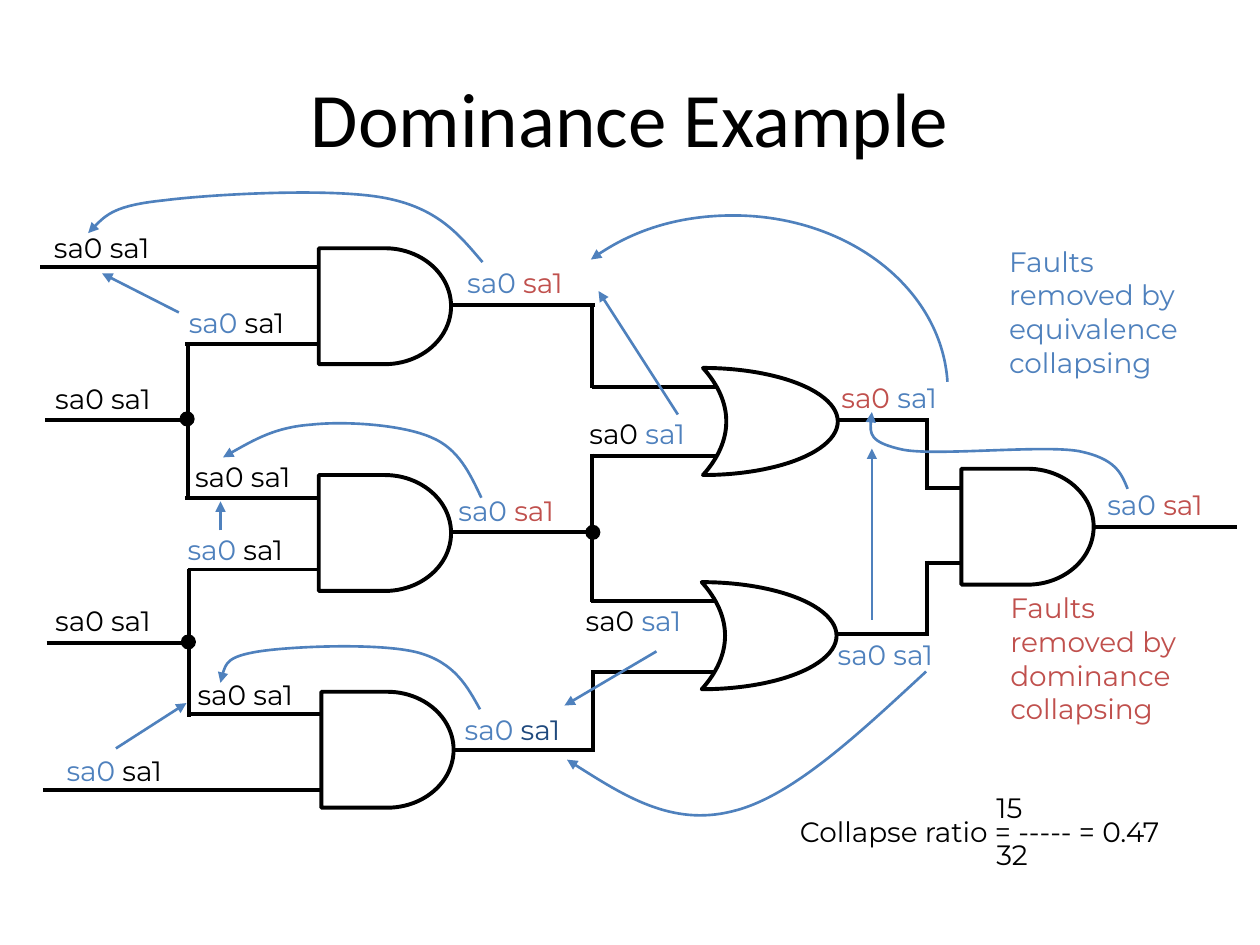
from collections import namedtuple

import lxml.etree
import pptx
import pptx.dml.color
import pptx.enum.shapes
import pptx.enum.text
import pptx.oxml.ns
import pptx.util

BLACK = pptx.dml.color.RGBColor(0x00, 0x00, 0x00)
BLUE = pptx.dml.color.RGBColor(0x4F, 0x81, 0xBD)
RED = pptx.dml.color.RGBColor(0xC0, 0x50, 0x4D)
NAVY = pptx.dml.color.RGBColor(0x1F, 0x49, 0x7D)

SHAPES = pptx.enum.shapes.MSO_SHAPE
ANCHOR = pptx.enum.text.MSO_ANCHOR
ALIGN = pptx.enum.text.PP_ALIGN
GRID_CM = 2.54
Box = namedtuple("Box", "left top width height")

AND_GATES = [(2.53, 1.97), (2.53, 3.77), (2.55, 5.49), (7.63, 3.72)]
OR_GATES = [(5.58, 2.92), (5.57, 4.62)]
JUNCTIONS = [(1.43, 3.27), (1.44, 5.04), (4.65, 4.17)]
HORIZONTAL_WIRES = [
    (2.12, 0.32, 2.53), (2.73, 1.47, 2.54), (3.33, 0.36, 1.49),
    (3.95, 1.47, 2.54), (4.52, 1.49, 2.54), (5.1, 0.37, 1.51),
    (5.67, 1.49, 2.55), (6.27, 0.34, 2.56),
    (2.42, 3.58, 4.72), (4.22, 3.57, 4.7), (5.95, 3.6, 4.72),
    (3.07, 4.7, 5.69), (3.62, 4.7, 5.69), (4.77, 4.69, 5.68), (5.33, 4.69, 5.67),
    (3.33, 6.65, 7.37), (5.03, 6.63, 7.37), (3.87, 7.34, 7.63), (4.47, 7.34, 7.63),
    (4.18, 8.68, 9.82),
]
VERTICAL_WIRES = [
    (1.49, 2.72, 3.96), (1.5, 4.52, 5.69), (4.7, 2.43, 3.08), (4.7, 3.6, 4.78),
    (4.71, 5.32, 5.96), (7.36, 3.32, 3.89), (7.36, 4.45, 5.05),
]
FAULTS = [
    (0.33, 1.78, BLACK, BLACK), (1.4, 2.38, BLUE, BLACK), (0.34, 2.98, BLACK, BLACK),
    (1.45, 3.6, BLACK, BLACK), (1.39, 4.18, BLUE, BLACK), (0.34, 4.74, BLACK, BLACK),
    (1.47, 5.33, BLACK, BLACK), (0.43, 5.93, BLUE, BLACK),
    (3.61, 2.06, BLUE, RED), (3.54, 3.87, BLUE, RED), (3.59, 5.61, BLUE, NAVY),
    (4.58, 3.26, BLACK, BLUE), (4.55, 4.74, BLACK, BLUE),
    (6.58, 2.97, RED, BLUE), (6.55, 5.01, BLUE, BLUE), (8.69, 3.82, BLUE, RED),
]
STRAIGHT_ARROWS = [
    ((1.42, 2.48), (0.81, 2.17)), ((5.38, 3.29), (4.75, 2.31)),
    ((6.92, 4.92), (6.92, 3.56)), ((5.21, 5.17), (4.48, 5.6)),
    ((1.75, 4.21), (1.75, 3.98)), ((0.92, 5.94), (1.48, 5.58)),
]
CURVED_ARROWS = [
    [(7.52, 3.03), (7.47, 2.28), (6.72, 1.71), (5.82, 1.71),
     (5.41, 1.71), (5, 1.83), (4.69, 2.06)],
    [(8.95, 3.88), (8.9, 3.76), (8.86, 3.64), (8.56, 3.58), (8.27, 3.53),
     (7.44, 3.62), (7.17, 3.57), (6.89, 3.51), (6.9, 3.39), (6.92, 3.27)],
    [(3.83, 2.08), (3.65, 1.87), (3.48, 1.65), (3.05, 1.57), (2.63, 1.49),
     (1.69, 1.54), (1.3, 1.59), (0.91, 1.63), (0.8, 1.74), (0.7, 1.85)],
    [(3.81, 5.63), (3.71, 5.45), (3.61, 5.26), (3.32, 5.18), (3.02, 5.1),
     (2.32, 5.13), (2.06, 5.17), (1.8, 5.21), (1.77, 5.31), (1.75, 5.42)],
    [(3.82, 3.95), (3.73, 3.76), (3.64, 3.56), (3.42, 3.47), (3.19, 3.37),
     (2.74, 3.34), (2.47, 3.37), (2.19, 3.39), (1.98, 3.51), (1.77, 3.63)],
    [(7.35, 5.33), (6.81, 5.83), (6.28, 6.33), (5.81, 6.44),
     (5.33, 6.56), (4.91, 6.29), (4.5, 6.03)],
]


def length(steps):
    """Turn grid steps into a length."""
    return pptx.util.Cm(GRID_CM * steps)


def place(box, point):
    """Return the slide position of a point given relative to a box."""
    return length(box.left + point[0]), length(box.top + point[1])


def apply_format(target, values):
    """Set every attribute named in a dict of format values."""
    for name, value in values.items():
        setattr(target, name, value)


def add_element(parent, tag, **attributes):
    """Append a child element to an XML parent."""
    return lxml.etree.SubElement(parent, pptx.oxml.ns.qn(tag), **attributes)


def set_line(shape, color, width, arrow=False):
    """Give a shape or connector its line and optional arrowhead."""
    shape.line.color.rgb = color
    shape.line.width = pptx.util.Pt(width)
    if arrow:
        add_element(shape.line._get_or_add_ln(), "a:tailEnd", type="triangle")


def add_text(slide, box, paragraphs, size=16, font="Montserrat",
             frame_format=None, paragraph_format=None):
    """Add a text box whose paragraphs are lists of (text, color) runs."""
    shape = slide.shapes.add_textbox(*place(box, (0, 0)), length(box.width), length(box.height))
    apply_format(shape.text_frame, {"word_wrap": False, **(frame_format or {})})
    for index, runs in enumerate(paragraphs):
        frame = shape.text_frame
        paragraph = frame.add_paragraph() if index else frame.paragraphs[0]
        apply_format(paragraph, paragraph_format or {})
        for text, color in runs:
            run = paragraph.add_run()
            run.text = text
            apply_format(run.font, {"size": pptx.util.Pt(size), "name": font})
            run.font.color.rgb = color
    return shape


def add_symbol(slide, box, kind, point, size, width=2.25, fill=None):
    """Add one outlined circuit symbol."""
    shape = slide.shapes.add_shape(kind, *place(box, point), *map(length, size))
    shape.shadow.inherit = False
    if fill is None:
        shape.fill.background()
    else:
        shape.fill.solid()
        shape.fill.fore_color.rgb = fill
    set_line(shape, BLACK, width)
    return shape


def add_straight(slide, box, start, end, color, width, arrow=False):
    """Add a straight connector."""
    connector = slide.shapes.add_connector(
        pptx.enum.shapes.MSO_CONNECTOR.STRAIGHT, *place(box, start), *place(box, end))
    set_line(connector, color, width, arrow)
    add_element(connector._element.spPr, "a:effectLst")


def add_curve(slide, box, points):
    """Add a curved arrow through a chain of cubic Bezier points."""
    start, *others = [place(box, point) for point in points]
    builder = slide.shapes.build_freeform(*start)
    builder.add_line_segments(others, close=False)
    shape = builder.convert_to_shape()
    shape.shadow.inherit = False
    shape.fill.background()
    segments = shape._element.xpath(".//a:lnTo")
    outline = segments[0].getparent()
    for first in range(0, len(segments), 3):
        curve = add_element(outline, "a:cubicBezTo")
        for segment in segments[first:first + 3]:
            curve.append(segment[0])
            outline.remove(segment)
    set_line(shape, BLUE, 1.5, arrow=True)


def draw_title(slide, box):
    """Draw the slide title."""
    add_text(slide, box, [[("Dominance Example", BLACK)]], 44, "Calibri",
             {"word_wrap": True, "vertical_anchor": ANCHOR.MIDDLE},
             {"alignment": ALIGN.CENTER})


def draw_circuit(slide, box):
    """Draw the gates, wires and junctions."""
    for point in AND_GATES:
        add_symbol(slide, box, SHAPES.FLOWCHART_DELAY, point, (1.05, 0.92))
    for point in OR_GATES:
        gate = add_symbol(slide, box, SHAPES.MOON, point, (1.07, 0.85))
        gate.adjustments[0] = 0.827
        gate._element.spPr.xfrm.set("flipH", "1")
    for y, left, right in HORIZONTAL_WIRES:
        add_straight(slide, box, (left, y), (right, y), BLACK, 2.25)
    for x, top, bottom in VERTICAL_WIRES:
        add_straight(slide, box, (x, top), (x, bottom), BLACK, 2.25)
    for point in JUNCTIONS:
        add_symbol(slide, box, SHAPES.OVAL, point, (0.11, 0.11), 0.75, BLACK)


def draw_faults(slide, box):
    """Draw the stuck-at fault labels and the arrows between them."""
    for x, y, first, second in FAULTS:
        label_box = Box(box.left + x, box.top + y, 1.14, 0.37)
        add_text(slide, label_box, [[("sa0 ", first), ("sa1", second)]])
    for points in CURVED_ARROWS:
        add_curve(slide, box, points)
    for start, end in STRAIGHT_ARROWS:
        add_straight(slide, box, start, end, BLUE, 1.5, arrow=True)


def draw_legend(slide, box, method, color):
    """Draw the note on which faults a method removes."""
    lines = ["Faults", "removed by", method, "collapsing"]
    add_text(slide, box, [[(line, color)] for line in lines])


def draw_ratio(slide, box):
    """Draw the collapse ratio as a three-line fraction."""
    lines = ["15", "Collapse ratio = ----- = 0.47", "32"]
    shape = add_text(slide, box, [[(line, BLACK)] for line in lines],
                     paragraph_format={"line_spacing": 0.7})
    for paragraph in shape.text_frame.paragraphs[::2]:
        apply_format_xml = paragraph._p.get_or_add_pPr()
        apply_format_xml.set("marL", str(length(1.56)))
        apply_format_xml.set("indent", "0")


def main():
    """Build and save the slide."""
    presentation = pptx.Presentation()
    apply_format(presentation, {"slide_width": length(10), "slide_height": length(7.5)})
    slide = presentation.slides.add_slide(presentation.slide_layouts[6])
    diagram = Box(0, 0, 10, 7.5)
    draw_title(slide, Box(0.5, 0.3, 9, 1.25))
    draw_circuit(slide, diagram)
    draw_faults(slide, diagram)
    draw_legend(slide, Box(7.91, 1.89, 1.72, 1.17), "equivalence", BLUE)
    draw_legend(slide, Box(7.92, 4.64, 1.83, 1.18), "dominance", RED)
    draw_ratio(slide, Box(6.25, 6.3, 3.38, 0.66))
    presentation.save("out.pptx")


if __name__ == "__main__":
    main()
